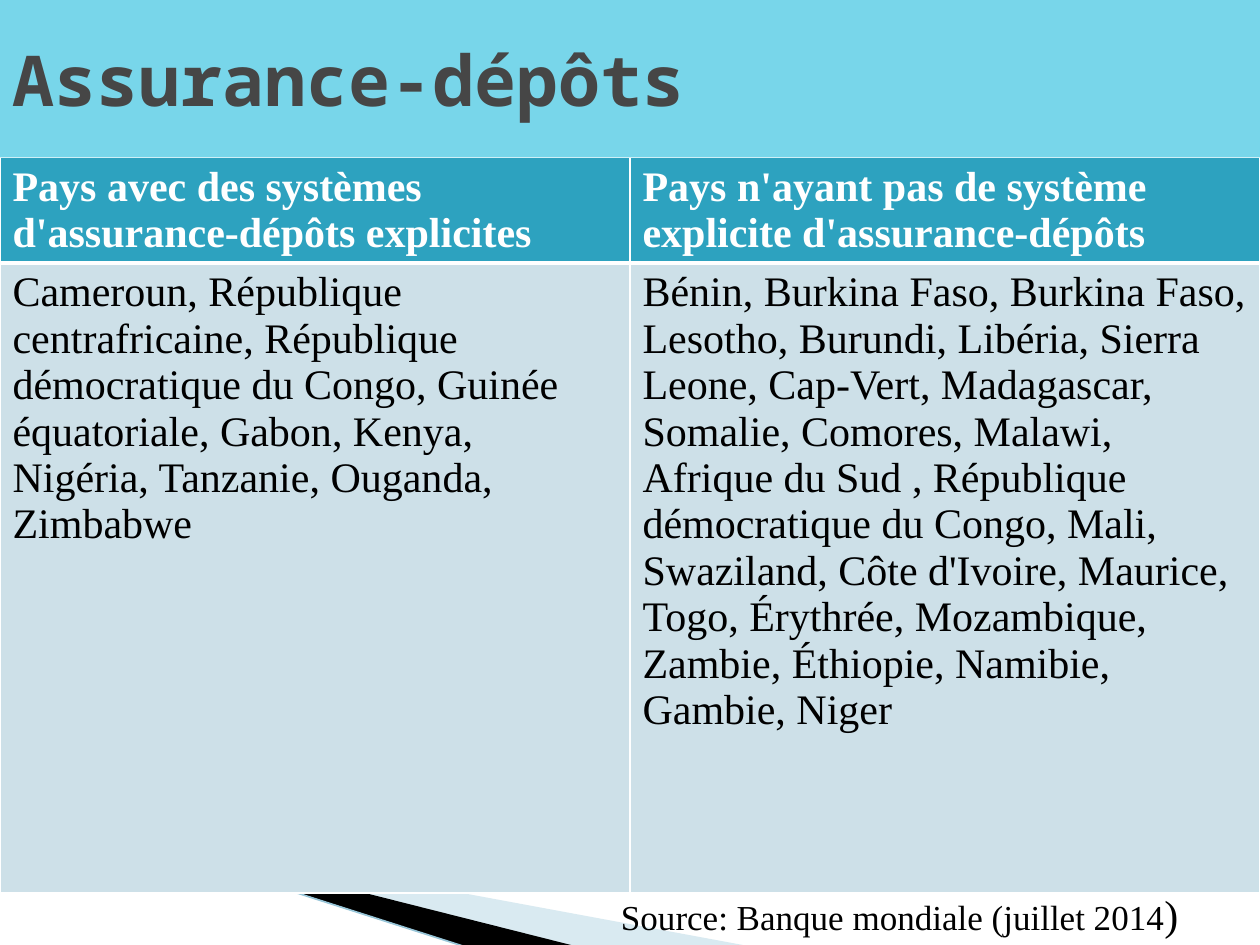
from dataclasses import dataclass

from lxml import etree
from pptx import Presentation
from pptx.dml.color import RGBColor
from pptx.enum.shapes import MSO_CONNECTOR, MSO_SHAPE
from pptx.enum.text import MSO_ANCHOR, MSO_AUTO_SIZE, PP_ALIGN
from pptx.oxml.ns import qn
from pptx.util import Inches, Pt

RECT = MSO_SHAPE.RECTANGLE
STRAIGHT = MSO_CONNECTOR.STRAIGHT
MIDDLE = MSO_ANCHOR.MIDDLE
LEFT = PP_ALIGN.LEFT
GROW = MSO_AUTO_SIZE.SHAPE_TO_FIT_TEXT


@dataclass(frozen=True)
class Theme:
    white: str = "FFFFFF"
    black: str = "000000"
    gray: str = "464646"
    sky: str = "78D6EA"
    teal: str = "2DA2BF"
    pale: str = "CDE0E8"
    mist: str = "A0CBDC"
    edge: str = "97C5D8"
    serif: str = "Times New Roman"
    mono: str = "Noto Sans Mono"
    title: int = 40
    body: int = 24
    note: int = 20


def write(para, text, size, color, font, bold=False):
    run = para.add_run()
    run.text = text
    run.font.size = Pt(size)
    run.font.name = font
    run.font.bold = bold
    run.font.color.rgb = RGBColor.from_string(color)


def paint(fill, color):
    fill.solid()
    fill.fore_color.rgb = RGBColor.from_string(color)


class Deck:
    def __init__(self, theme, slide):
        self.theme = theme
        self.slide = slide
        self.shapes = slide.shapes

    def wedge(self, points, color, alpha=None):
        spots = [(Inches(x), Inches(y)) for x, y in points]
        build = self.shapes.build_freeform(*spots[0])
        build.add_line_segments(spots[1:], close=True)
        shape = build.convert_to_shape()
        shape.shadow.inherit = False
        shape.line.fill.background()
        paint(shape.fill, color)
        if alpha:
            tone = shape.fill._xPr.find(".//" + qn("a:srgbClr"))
            etree.SubElement(tone, qn("a:alpha"), val=str(alpha * 1000))

    def line(self, start, end, color, width):
        ends = [Inches(v) for v in (*start, *end)]
        line = self.shapes.add_connector(STRAIGHT, *ends)
        line.line.color.rgb = RGBColor.from_string(color)
        line.line.width = Pt(width)
        etree.SubElement(line._element.spPr, qn("a:effectLst"))

    def banner(self, text, box):
        look = self.theme
        shape = self.shapes.add_shape(RECT, *map(Inches, box))
        shape.shadow.inherit = False
        shape.line.fill.background()
        paint(shape.fill, look.sky)
        frame = shape.text_frame
        frame.word_wrap = True
        frame.vertical_anchor = MIDDLE
        para = frame.paragraphs[0]
        para.alignment = LEFT
        write(para, text, size=look.title, color=look.gray,
              font=look.mono, bold=True)

    def note(self, parts, box):
        look = self.theme
        frame = self.shapes.add_textbox(*map(Inches, box)).text_frame
        frame.word_wrap = False
        frame.auto_size = GROW
        for text, size in parts:
            write(frame.paragraphs[0], text, size=size, color=look.black,
                  font=look.serif)

    def border(self, cell, widths):
        props = cell._tc.get_or_add_tcPr()
        for side, width in widths.items():
            edge = etree.SubElement(props, qn("a:ln" + side), w=str(Pt(width)))
            fill = etree.SubElement(edge, qn("a:solidFill"))
            etree.SubElement(fill, qn("a:srgbClr"), val=self.theme.white)

    def table(self, rows, box, heights):
        look = self.theme
        grid = self.shapes.add_table(len(rows), len(rows[0]),
                                     *map(Inches, box)).table
        for r, texts in enumerate(rows):
            grid.rows[r].height = Inches(heights[r])
            head = r == 0
            # A thick rule parts the header from the body
            rule = {"L": 1, "R": 1, "T": 1 if head else 3, "B": 3 if head else 1}
            for c, text in enumerate(texts):
                cell = grid.cell(r, c)
                self.border(cell, rule)
                paint(cell.fill, look.teal if head else look.pale)
                write(cell.text_frame.paragraphs[0], text, size=look.body,
                      color=look.white if head else look.black,
                      font=look.serif, bold=head)


def main():
    prs = Presentation()
    prs.slide_width, prs.slide_height = Inches(10), Inches(7.5)
    look = Theme()
    deck = Deck(look, prs.slides.add_slide(prs.slide_layouts[6]))

    # Corner wedges
    deck.wedge([(0.55, 6.51), (5.95, 7.51), (4.56, 7.51), (0.55, 6.5)],
               look.mist, alpha=40)
    deck.wedge([(0.53, 6.49), (4.57, 7.51), (3.72, 7.52), (0.54, 6.5)],
               look.black)
    deck.line((-0.01, 6.33), (3.71, 7.52), look.edge, 0.95)

    # Country table
    deck.table([
        ("Pays avec des systèmes d'assurance-dépôts explicites",
         "Pays n'ayant pas de système explicite d'assurance-dépôts"),
        ("Cameroun, République centrafricaine, République démocratique du "
         "Congo, Guinée équatoriale, Gabon, Kenya, Nigéria, Tanzanie, "
         "Ouganda, Zimbabwe",
         "Bénin, Burkina Faso, Burkina Faso, Lesotho, Burundi, Libéria, "
         "Sierra Leone, Cap-Vert, Madagascar, Somalie, Comores, Malawi, "
         "Afrique du Sud , République démocratique du Congo, Mali, "
         "Swaziland, Côte d'Ivoire, Maurice, Togo, Érythrée, Mozambique, "
         "Zambie, Éthiopie, Namibie, Gambie, Niger"),
    ], (0, 1.25, 10, 5.75), heights=(0.75, 5))

    # Title and source
    deck.banner("Assurance-dépôts", (0, 0, 10, 1.25))
    deck.note([("Source: Banque mondiale (juillet 2014", look.note),
               (")", look.body)], (4.83, 7, 4.65, 0.5))

    prs.save("out.pptx")


if __name__ == "__main__":
    main()
